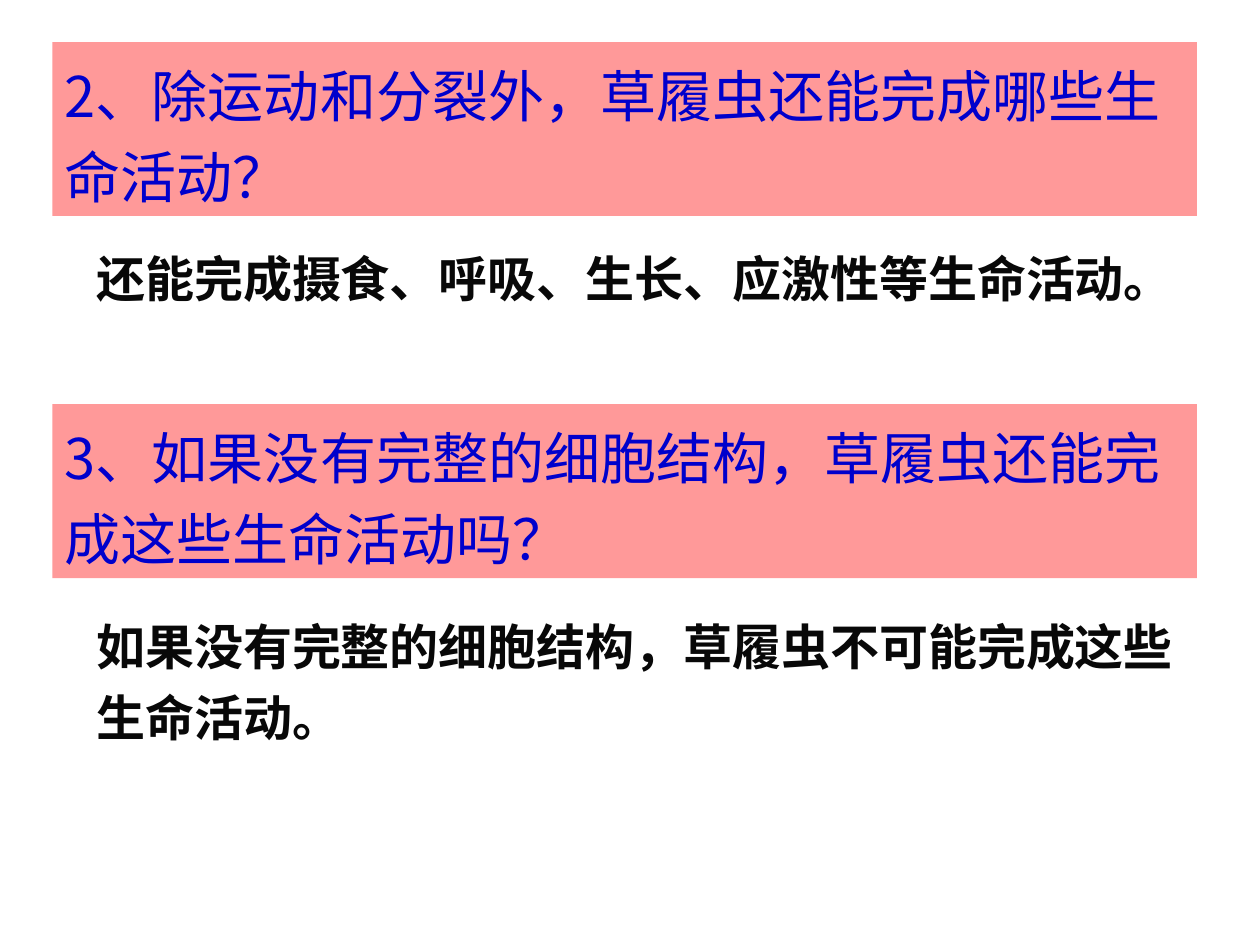
"""Build a slide with two questions about paramecium and their answers."""
import lxml.etree
import pptx
import pptx.dml.color
import pptx.enum.shapes
import pptx.enum.text
import pptx.oxml.ns
import pptx.util

Pt = pptx.util.Pt
CJK_FONT = "Noto Sans CJK SC"
QUESTION_FORMAT = {"name": CJK_FONT, "size": Pt(32), "bold": False}
ANSWER_FORMAT = {"name": CJK_FONT, "size": Pt(28), "bold": True}
FRAME_FORMAT = {
    "word_wrap": True,
    "auto_size": pptx.enum.text.MSO_AUTO_SIZE.SHAPE_TO_FIT_TEXT,
    "vertical_anchor": pptx.enum.text.MSO_ANCHOR.TOP,
}
PARAGRAPH_FORMAT = {"line_spacing": 1.2, "alignment": pptx.enum.text.PP_ALIGN.LEFT}


def set_color(target, value):
    """Give a fill or font colour format a hex colour."""
    target.rgb = pptx.dml.color.RGBColor.from_string(value)


def apply_format(target, values):
    """Set each attribute of the target from a dict."""
    for name, value in values.items():
        setattr(target, name, value)


def write_text(box, text, font_format, color):
    """Write one formatted paragraph into a box."""
    apply_format(box.text_frame, FRAME_FORMAT)
    para = box.text_frame.paragraphs[0]
    apply_format(para, PARAGRAPH_FORMAT)
    span = para.add_run()
    span.text = text
    apply_format(span.font, font_format)
    set_color_target = span.font.color
    set_color(set_color_target, color)
    properties = span.font._element
    east_asian = lxml.etree.SubElement(properties, pptx.oxml.ns.qn("a:ea"))
    east_asian.set("typeface", CJK_FONT)


def add_question(page, top, text):
    """Add a pink question banner."""
    box = page.shapes.add_shape(
        pptx.enum.shapes.MSO_SHAPE.RECTANGLE, Pt(30), Pt(top), Pt(654), Pt(99.4)
    )
    box.shadow.inherit = False
    box.fill.solid()
    set_color(box.fill.fore_color, "FF9999")
    box.line.fill.background()
    write_text(box, text, QUESTION_FORMAT, "0000CC")


def add_answer(page, top, height, text):
    """Add a bold answer below its question."""
    box = page.shapes.add_textbox(Pt(48), Pt(top), Pt(650), Pt(height))
    write_text(box, text, ANSWER_FORMAT, "080808")


def main():
    """Build and save the deck."""
    deck = pptx.Presentation()
    deck.slide_width, deck.slide_height = Pt(720), Pt(540)
    page = deck.slides.add_slide(deck.slide_layouts[6])
    add_question(page, 24, "2、除运动和分裂外，草履虫还能完成哪些生命活动？")
    add_answer(page, 132, 69, "还能完成摄食、呼吸、生长、应激性等生命活动。")
    add_question(page, 231, "3、如果没有完整的细胞结构，草履虫还能完成这些生命活动吗？")
    add_answer(page, 342, 88, "如果没有完整的细胞结构，草履虫不可能完成这些生命活动。")
    deck.save("out.pptx")


if __name__ == "__main__":
    main()
